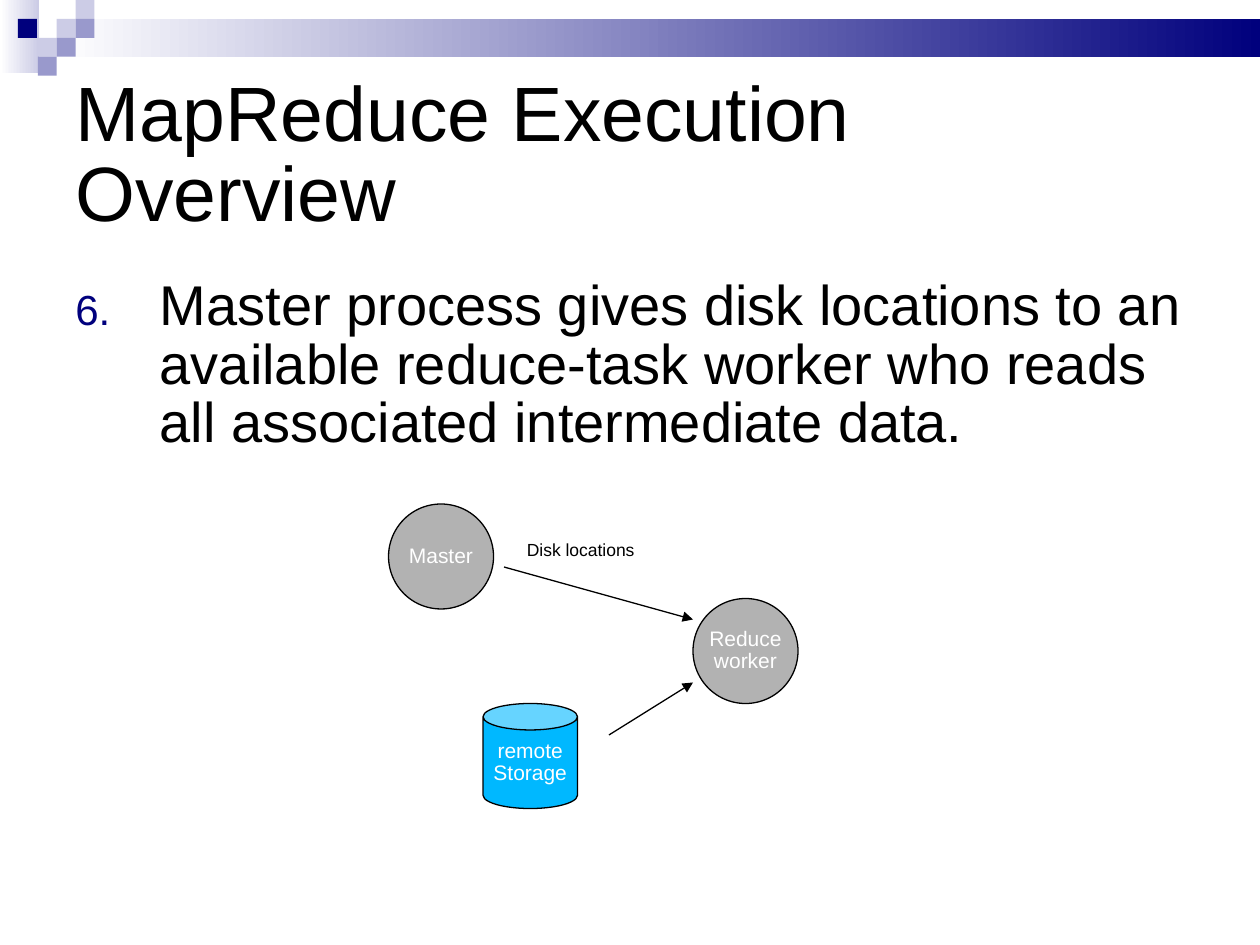
from lxml import etree
from pptx import Presentation
from pptx import util as u
from pptx.dml import color
from pptx.enum import shapes, text
from pptx.oxml import ns

COLUMNS, ROWS = 120, 90
TILE = 1.8
NAVY, LILAC, VIOLET, GRAY, CYAN = "00007D", "CCCCE6", "9999CC", "B2B2B2", "00B8FF"
BLACK, WHITE = "000000", "FFFFFF"
KIND = shapes.MSO_SHAPE


def rgb(value):
    return color.RGBColor.from_string(value)


def add_xml(parent, tag, **attributes):
    return etree.SubElement(parent, ns.qn(tag), attributes)


def write(frame, words, size=12, ink=BLACK, font="Arial", align=text.PP_ALIGN.LEFT,
          anchor=text.MSO_ANCHOR.TOP, before=0, wrap=True):
    frame.word_wrap = wrap
    frame.vertical_anchor = anchor
    for index, line in enumerate(words.split("\n")):
        para = frame.add_paragraph() if index else frame.paragraphs[0]
        para.alignment = align
        para.line_spacing = 0.87
        para.space_before = u.Pt(before)
        span = para.add_run()
        span.text = line
        span.font.size = u.Pt(size)
        span.font.name = font
        span.font.color.rgb = rgb(ink)


class Page:
    def __init__(self, deck):
        self.cell_width = deck.slide_width / COLUMNS
        self.cell_height = deck.slide_height / ROWS
        self.shapes = deck.slides.add_slide(deck.slide_layouts[6]).shapes

    def place(self, column, row):
        return round(column * self.cell_width), round(row * self.cell_height)

    def shape(self, kind, column, row, width, height, fill=None, outline=None):
        shape = self.shapes.add_shape(kind, *self.place(column, row), *self.place(width, height))
        shape.shadow.inherit = False
        if fill:
            shape.fill.solid()
            shape.fill.fore_color.rgb = rgb(fill)
        if outline:
            shape.line.color.rgb = rgb(outline)
            shape.line.width = u.Pt(0.75)
        else:
            shape.line.fill.background()
        return shape

    def fade(self, column, row, width, height, start):
        fill = self.shape(KIND.RECTANGLE, column, row, width, height).fill
        fill.gradient()
        fill.gradient_angle = 180
        for stop, shade in zip(fill.gradient_stops, (start, WHITE)):
            stop.color.rgb = rgb(shade)

    def node(self, kind, column, row, width, words, fill):
        shape = self.shape(kind, column, row, width, 10, fill, BLACK)
        write(shape.text_frame, words, ink=WHITE, align=text.PP_ALIGN.CENTER,
              anchor=text.MSO_ANCHOR.MIDDLE, wrap=False)
        return shape

    def label(self, column, row, width, height, words, **style):
        box = self.shapes.add_textbox(*self.place(column, row), *self.place(width, height))
        write(box.text_frame, words, **style)
        return box

    def numbered(self, column, row, width, height, words, number, **style):
        box = self.label(column, row, width, height, words, **style)
        props = box.text_frame.paragraphs[0]._p.get_or_add_pPr()
        indent = u.Inches(0.67)
        props.set("marL", str(indent))
        props.set("indent", str(-indent))
        add_xml(add_xml(props, "a:buClr"), "a:srgbClr", val=NAVY)
        add_xml(props, "a:buSzPct", val="75000")
        add_xml(props, "a:buFont", typeface="Arial")
        add_xml(props, "a:buAutoNum", type="arabicPeriod", startAt=str(number))

    def arrow(self, start, end):
        arrow = self.shapes.add_connector(shapes.MSO_CONNECTOR.STRAIGHT,
                                          *self.place(*start), *self.place(*end))
        arrow.line.color.rgb = rgb(BLACK)
        arrow.line.width = u.Pt(0.75)
        add_xml(arrow.line._get_or_add_ln(), "a:tailEnd", type="triangle")
        add_xml(arrow._element.spPr, "a:effectLst")


def main():
    deck = Presentation()
    deck.slide_width, deck.slide_height = u.Inches(10), u.Inches(7.5)
    page = Page(deck)

    page.fade(0, 0, 3.72, 6.96, LILAC)
    page.fade(3 * TILE, TILE, COLUMNS - 3 * TILE, 2 * TILE, NAVY)
    tiles = [(3, 1, LILAC), (4, 0, LILAC), (4, 1, VIOLET), (2, 2, LILAC),
             (0.95, 1, NAVY), (3, 2, VIOLET), (2, 3, VIOLET)]
    for column, row, fill in tiles:
        page.shape(KIND.RECTANGLE, column * TILE, row * TILE, TILE, TILE, fill)

    page.label(6, 6, 108, 18, "MapReduce Execution Overview", size=44,
               anchor=text.MSO_ANCHOR.MIDDLE)
    page.numbered(6, 26, 108, 51,
                  "Master process gives disk locations to an available reduce-task "
                  "worker who reads all associated intermediate data.",
                  number=6, size=32, before=8)

    page.node(KIND.OVAL, 37, 48, 10, "Master", GRAY)
    page.arrow((48, 54), (66, 59))
    page.node(KIND.OVAL, 66, 57, 10, "Reduce\nworker", GRAY)
    page.label(49, 51, 13, 3, "Disk locations", size=10, before=5)
    storage = page.node(KIND.CAN, 46, 67, 9, "remote\nStorage", CYAN)
    storage.adjustments[0] = 0.28
    page.arrow((58, 70), (66, 65))

    deck.save("out.pptx")


if __name__ == "__main__":
    main()
